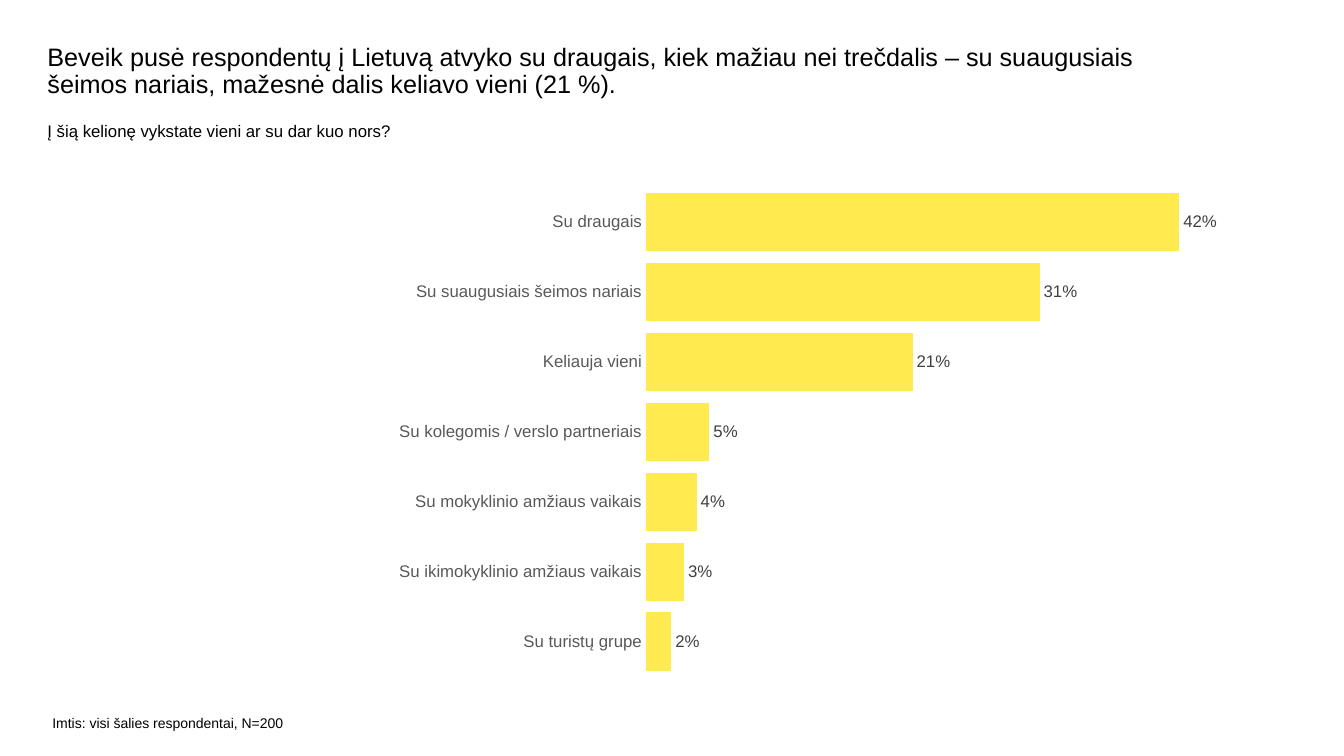
import dataclasses

import pptx
import pptx.chart.data
import pptx.dml.color
import pptx.enum.chart
import pptx.enum.text
import pptx.oxml
import pptx.oxml.ns
import pptx.util


@dataclasses.dataclass(frozen=True)
class Theme:
    font: str = "Arial"
    ink: str = "000000"
    category_ink: str = "595959"
    value_ink: str = "404040"
    bar: str = "FFEB50"
    title_size: int = 18
    text_size: int = 12
    note_size: int = 10


class SurveyPage:
    """Places styled elements on one slide, with lengths in percent of its size."""

    def __init__(self, deck, theme):
        self.deck = deck
        self.theme = theme
        self.page = deck.slides.add_slide(deck.slide_layouts[5])

    def area(self, left, top, width, height):
        across, down = self.deck.slide_width / 100, self.deck.slide_height / 100
        return [round(length) for length in
                (left * across, top * down, width * across, height * down)]

    def style(self, font, size, color):
        font.name = self.theme.font
        font.size = pptx.util.Pt(size)
        font.bold = False
        font.color.rgb = pptx.dml.color.RGBColor.from_string(color)

    def fill_box(self, box, text, size):
        frame = box.text_frame
        frame.word_wrap = True
        frame.auto_size = pptx.enum.text.MSO_AUTO_SIZE.NONE
        frame.vertical_anchor = pptx.enum.text.MSO_ANCHOR.TOP
        frame.margin_left = frame.margin_top = frame.margin_right = frame.margin_bottom = 0
        frame.text = text
        para = frame.paragraphs[0]
        para.alignment = pptx.enum.text.PP_ALIGN.LEFT
        self.style(para.font, size, self.theme.ink)
        return para

    def title(self, text, *place):
        box = self.page.shapes.title
        box.left, box.top, box.width, box.height = self.area(*place)
        self.fill_box(box, text, self.theme.title_size).line_spacing = 0.9

    def text(self, text, size, *place):
        self.fill_box(self.page.shapes.add_textbox(*self.area(*place)), text, size)

    def bars(self, answers, plot, *place):
        theme = self.theme
        data = pptx.chart.data.CategoryChartData(number_format="0%")
        data.categories = list(answers)
        data.add_series("Series 1", list(answers.values()))
        chart = self.page.shapes.add_chart(
            pptx.enum.chart.XL_CHART_TYPE.BAR_CLUSTERED, *self.area(*place), data).chart
        chart.has_legend = chart.has_title = False
        self.style(chart.font, theme.note_size, theme.ink)

        categories = chart.category_axis
        categories.major_tick_mark = pptx.enum.chart.XL_TICK_MARK.NONE
        categories.format.line.fill.background()
        self.style(categories.tick_labels.font, theme.text_size, theme.category_ink)
        values = chart.value_axis
        values.minimum_scale, values.maximum_scale = 0, 0.45
        values.has_major_gridlines = False
        values.visible = False

        bar_plot = chart.plots[0]
        bar_plot.gap_width = 20
        bar_plot.vary_by_categories = False
        series = bar_plot.series[0]
        series.format.fill.solid()
        series.format.fill.fore_color.rgb = pptx.dml.color.RGBColor.from_string(theme.bar)
        labels = series.data_labels
        labels.show_value = True
        labels.number_format = "0%"
        labels.number_format_is_linked = False
        labels.position = pptx.enum.chart.XL_LABEL_POSITION.OUTSIDE_END
        self.style(labels.font, theme.text_size, theme.value_ink)
        self.fix_plot(chart, plot)

    def fix_plot(self, chart, plot):
        settings = [("layoutTarget", "inner"), ("xMode", "edge"), ("yMode", "edge")]
        settings += zip("xywh", plot)
        inner = "".join(f'<c:{name} val="{value}"/>' for name, value in settings)
        layout = pptx.oxml.parse_xml(
            f'<c:layout {pptx.oxml.ns.nsdecls("c")}>'
            f"<c:manualLayout>{inner}</c:manualLayout></c:layout>")
        plot_area = chart.element.find(".//" + pptx.oxml.ns.qn("c:plotArea")) \
            if hasattr(chart, "element") else chart.plots[0]._element.getparent()
        for former in plot_area.findall(pptx.oxml.ns.qn("c:layout")):
            plot_area.remove(former)
        plot_area.insert(0, layout)


def main():
    deck = pptx.Presentation()
    deck.slide_width = pptx.util.Inches(13.33)
    deck.slide_height = pptx.util.Inches(7.5)
    theme = Theme()
    survey = SurveyPage(deck, theme)
    survey.title(
        "Beveik pusė respondentų į Lietuvą atvyko su draugais, kiek mažiau nei trečdalis – "
        "su suaugusiais šeimos nariais, mažesnė dalis keliavo vieni (21 %).",
        3.53, 5.87, 84.4, 8)
    survey.text("Į šią kelionę vykstate vieni ar su dar kuo nors?",
                theme.text_size, 3.53, 16, 89.2, 8.13)
    survey.text("Imtis: visi šalies respondentai, N=200",
                theme.note_size, 3.9, 94.53, 18.98, 3.2)
    answers = {
        "Su turistų grupe": 0.02,
        "Su ikimokyklinio amžiaus vaikais": 0.03,
        "Su mokyklinio amžiaus vaikais": 0.04,
        "Su kolegomis / verslo partneriais": 0.05,
        "Keliauja vieni": 0.21,
        "Su suaugusiais šeimos nariais": 0.31,
        "Su draugais": 0.42,
    }
    survey.bars(answers, (0.32, 0.04, 0.67, 0.93), 27.76, 22, 63.47, 69.6)
    deck.save("out.pptx")


if __name__ == "__main__":
    main()
